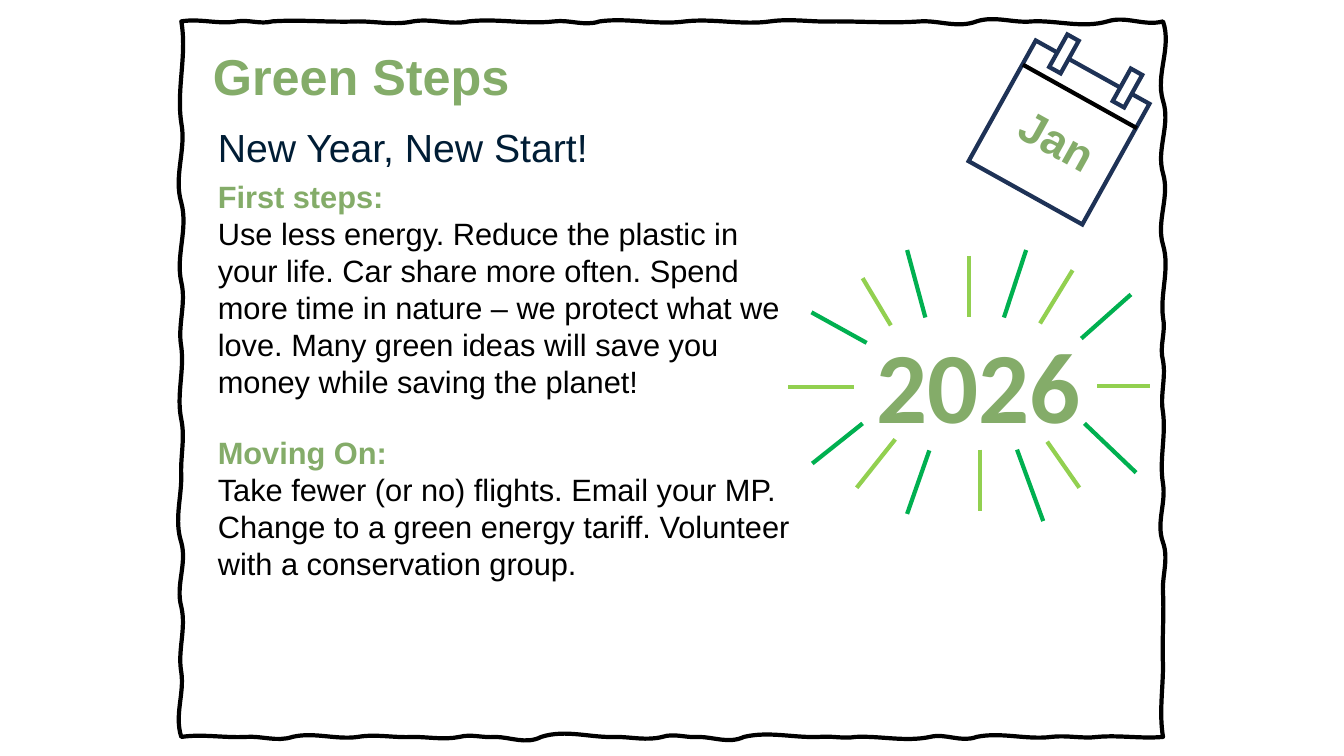
from lxml import etree
from pptx import Presentation
from pptx.dml.color import RGBColor
from pptx.enum.shapes import MSO_CONNECTOR, MSO_SHAPE
from pptx.enum.text import MSO_ANCHOR, MSO_AUTO_SIZE, PP_ALIGN
from pptx.oxml.ns import qn
from pptx.util import Cm, Pt

STRAIGHT = MSO_CONNECTOR.STRAIGHT
RECT = MSO_SHAPE.RECTANGLE
TOP = MSO_ANCHOR.TOP
LEFT = PP_ALIGN.LEFT
FIXED = MSO_AUTO_SIZE.NONE

SAGE = RGBColor(0x84, 0xAC, 0x69)
LIME = RGBColor(0x92, 0xD0, 0x50)
GREEN = RGBColor(0x00, 0xB0, 0x50)
NAVY = RGBColor(0x1E, 0x32, 0x56)
INK = RGBColor(0x00, 0x1D, 0x35)
BLACK = RGBColor(0x00, 0x00, 0x00)
WHITE = RGBColor(0xFF, 0xFF, 0xFF)
TILT = 29.1


def write(box, place, text, size, color, bold=True, face="Arial"):
    box.left, box.top, box.width, box.height = [Cm(v) for v in place]
    frame = box.text_frame
    frame.word_wrap = True
    frame.auto_size = FIXED
    frame.vertical_anchor = TOP
    frame.text = text
    para = frame.paragraphs[0]
    para.alignment = LEFT
    para.font.name = face
    para.font.size = Pt(size)
    para.font.bold = bold
    para.font.color.rgb = color


def stroke(shapes, ends, color):
    line = shapes.add_connector(STRAIGHT, *[Cm(v) for v in ends])
    line.line.color.rgb = color
    line.line.width = Pt(3)
    etree.SubElement(line._element.spPr, qn("a:effectLst"))


deck = Presentation()
deck.slide_width = Cm(33.87)
deck.slide_height = Cm(19.05)
slide = deck.slides.add_slide(deck.slide_layouts[1])
shapes = slide.shapes

write(shapes.title, (5.11, 1.02, 18.75, 1.8), "Green Steps", 36, SAGE)

motto = shapes.add_textbox(0, 0, 0, 0)
write(motto, (5.21, 2.57, 19.58, 1.9), "New Year, New Start!", 28, INK, False)
motto.text_frame.margin_left = Cm(0.28)
motto.text_frame.margin_top = Cm(0.54)

body = slide.placeholders[1]
body.left, body.top, body.width, body.height = Cm(5.21), Cm(4.34), Cm(15.32), Cm(10.54)
frame = body.text_frame
frame.auto_size = FIXED
frame.margin_left = frame.margin_right = Cm(0.28)
steps = [
    ("First steps:", True, 0),
    ("Use less energy. Reduce the plastic in your life. Car share more often. "
     "Spend more time in nature – we protect what we love. Many green ideas "
     "will save you money while saving the planet!", False, 0),
    ("Moving On:", True, 24.3),
    ("Take fewer (or no) flights. Email your MP. Change to a green energy "
     "tariff. Volunteer with a conservation group.", False, 0),
]
for i, (text, head, gap) in enumerate(steps):
    para = frame.add_paragraph() if i else frame.paragraphs[0]
    para.text = text
    para.line_spacing = Pt(26.45)
    para.space_before = Pt(gap)
    props = para._p.get_or_add_pPr()
    props.set("marL", "0")
    props.set("indent", "0")
    etree.SubElement(props, qn("a:buNone"))
    para.font.name = "Arial"
    para.font.size = Pt(22)
    para.font.bold = head
    para.font.color.rgb = SAGE if head else BLACK

edges = [
    (True, [
        (5.97, -.08, .08), (6.86, -.05, .08), (9.02, -.05, .03),
        (10.41, 0, .1), (11.81, -.08, .1), (13.97, -.08, .08),
        (15.11, -.05, .13), (17.27, -.1, .1), (19.41, -.08, .1),
        (21.06, -.08, .03), (23.19, 0, .05), (24.61, -.03, .18),
        (26.01, -.15, .05), (27.91, -.03, .18), (29.31, -.15, .13)]),
    (False, [
        (2.54, .23, -.2), (4.37, .2, -.18), (6.17, .18, -.18),
        (8, .18, -.08), (9.09, .08, -.1), (10.39, .08, -.08),
        (12.19, .08, -.1), (13.67, .08, -.18), (14.94, .15, -.03),
        (16.76, .03, -.03), (18.57, 0, -.1)]),
    (True, [
        (27.66, .05, -.05), (26.49, .05, -.05), (24.61, .08, -.13),
        (23.44, .15, -.1), (21.56, .13, -.03), (20.65, .05, -.03),
        (18.75, .03, -.15), (17.6, .18, 0), (16.69, .03, -.1),
        (15.52, .1, 0), (13.64, .03, -.2), (12.47, .2, 0),
        (11.58, .03, -.08), (10.41, .08, 0), (9.02, .03, -.08),
        (7.37, .08, -.13), (6.2, .13, -.03), (4.57, .03, -.08)]),
    (False, [
        (16.94, -.18, .08), (15.29, -.1, .13), (13.67, -.15, .15),
        (12.01, -.18, 0), (10.57, -.03, .1), (8.74, -.13, .08),
        (7.11, -.1, .13), (5.11, -.15, .18), (3.1, -.2, .13),
        (.54, -.13, .15)]),
]
x, y = 4.57, 0.54
pen = shapes.build_freeform(Cm(x), Cm(y), 1.0)
points, bends = [], []
for flat, waves in edges:
    for end, out, back in waves:
        start = x if flat else y
        third = (end - start) / 3
        bends.append([
            (start + third, y + out) if flat else (x + out, start + third),
            (end - third, y + back) if flat else (x + back, end - third)])
        x, y = (end, y) if flat else (x, end)
        points.append((Cm(x), Cm(y)))
pen.add_line_segments(points, close=True)
border = pen.convert_to_shape()
border.shadow.inherit = False
border.fill.background()
border.line.color.rgb = BLACK
border.line.width = Pt(3)
for curve, pair in zip(list(border._element.iter(qn("a:lnTo"))), bends):
    curve.tag = qn("a:cubicBezTo")
    for i, (across, down) in enumerate(pair):
        bend = etree.Element(qn("a:pt"))
        bend.set("x", str(Cm(across) - border.left))
        bend.set("y", str(Cm(down) - border.top))
        curve.insert(i, bend)

page = shapes.add_group_shape().shapes
rings = [(28.25, 1.75, 0.33, 0.94), (26.65, 0.89, 0.33, 0.94)]
for place in [(25.05, 1.6, 3.28, 3.48)] + rings:
    part = page.add_shape(RECT, *[Cm(v) for v in place])
    part.rotation = TILT
    part.shadow.inherit = False
    part.line.color.rgb = NAVY
    part.line.width = Pt(3)
    miter = etree.SubElement(part._element.spPr.find(qn("a:ln")), qn("a:miter"))
    miter.set("lim", "800000")
    if place in rings:
        part.fill.solid()
        part.fill.fore_color.rgb = WHITE
    else:
        part.fill.background()
        stroke(page, (25.78, 1.63, 28.65, 3.23), BLACK)
month = page.add_textbox(0, 0, 0, 0)
write(month, (25.32, 3.2, 4.42, 1.63), "Jan", 32, SAGE)
month.rotation = TILT

year = shapes.add_textbox(0, 0, 0, 0)
write(year, (21.84, 8, 8.18, 3.33), "2026", 72, SAGE, face="Calibri")

rays = {
    LIME: [
        (24.41, 6.45, 24.41, 8), (21.74, 7.01, 22.45, 8.2),
        (27.03, 6.81, 26.21, 8.15), (22.56, 11.07, 21.59, 12.29),
        (26.39, 11.13, 27.2, 12.29), (21.51, 9.75, 19.86, 9.75),
        (28.98, 9.73, 27.64, 9.73), (24.69, 11.33, 24.69, 12.88)],
    GREEN: [
        (25.86, 6.3, 25.3, 8), (28.5, 7.42, 27.25, 8.53),
        (21.74, 10.67, 20.47, 11.68), (20.45, 7.87, 21.84, 8.64),
        (28.63, 11.91, 27.33, 10.67), (25.63, 11.33, 26.29, 13.13),
        (23.42, 11.35, 22.86, 12.95), (22.86, 6.3, 23.32, 8)],
}
for color, group in rays.items():
    for ends in group:
        stroke(shapes, ends, color)

deck.save("out.pptx")
